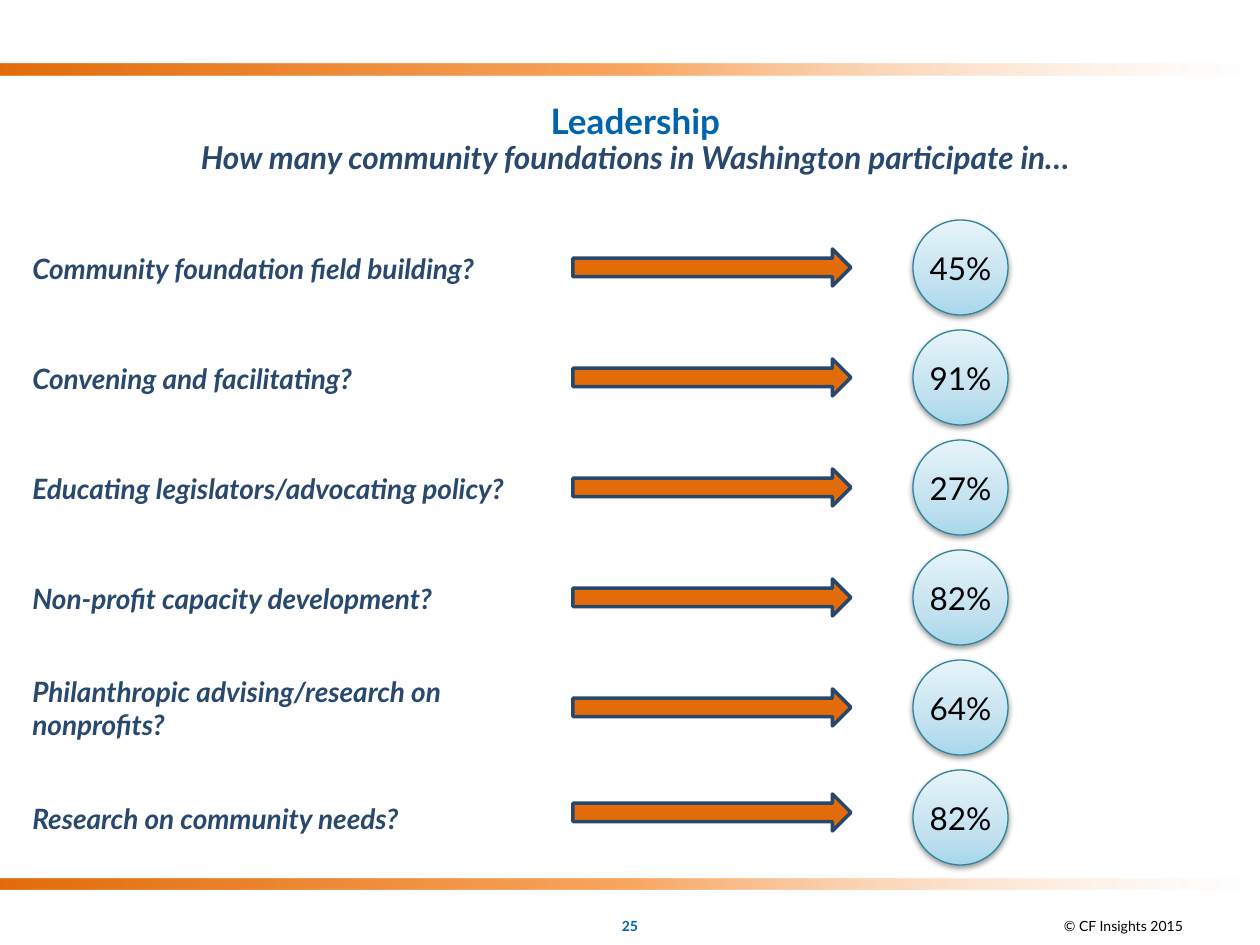
import pptx
import pptx.util
import pptx.dml.color
import pptx.enum.shapes
import pptx.enum.text
import pptx.oxml
import pptx.oxml.ns

HEX = {
    "blue": "0064AD", "navy": "28486E", "edge": "28476C", "black": "000000",
    "orange": "E36C09", "amber": "F9A661", "peach": "FDE1CA",
    "sky": "A8D7EB", "mist": "C3E2F0", "ice": "E7F4FA", "teal": "2D849A",
}
BAR = [(0, "orange", 100), (50, "amber", 100), (100, "peach", 0)]
DISC = [(0, "sky", 100), (35, "mist", 100), (100, "ice", 100)]
BARS = [879, 64]
HEADS = [
    ("Leadership", (82, 93, 1107, 55), 20, "blue", True, False),
    ("How many community foundations in Washington participate in…",
     (82, 132, 1107, 50), 18, "navy", True, True),
]
FEET = [
    ("25", (483, 907, 294, 38), 8, "blue", True, False),
    ("© CF Insights 2015", (987, 907, 273, 38), 8, "black", False, False),
]
ROWS = [
    ("Community foundation field building?", 1, "45%", 0),
    ("Convening and facilitating?", 1, "91%", 0),
    ("Educating legislators/advocating policy?", 1, "27%", 0),
    ("Non-profit capacity development?", 1, "82%", 0),
    ("Philanthropic advising/research on nonprofits?", 2, "64%", 0),
    ("Research on community needs?", 1, "82%", -5),
]
TOP, STEP = 268, 110
KIND = pptx.enum.shapes.MSO_SHAPE
ALIGN = pptx.enum.text.PP_ALIGN
ANCHOR = pptx.enum.text.MSO_ANCHOR
NS = pptx.oxml.ns.nsdecls("a")


def px(num):
    return pptx.util.Inches(num / 126)


def rgb(name):
    return pptx.dml.color.RGBColor.from_string(HEX[name])


def shape(kind, box):
    item = slide.shapes.add_shape(kind, *map(px, box))
    item.shadow.inherit = False
    return item


def edge(item, name, width):
    item.line.color.rgb = rgb(name)
    item.line.width = pptx.util.Pt(width)


def blend(item, stops, angle):
    item.fill.background()
    old = item.fill._xPr.find(pptx.oxml.ns.qn("a:noFill"))
    marks = "".join(
        f'<a:gs pos="{pos * 1000}"><a:srgbClr val="{HEX[name]}">'
        f'<a:alpha val="{alpha * 1000}"/></a:srgbClr></a:gs>'
        for pos, name, alpha in stops)
    old.getparent().replace(old, pptx.oxml.parse_xml(
        f'<a:gradFill {NS} rotWithShape="1"><a:gsLst>{marks}</a:gsLst>'
        f'<a:lin ang="{angle * 60000}" scaled="0"/></a:gradFill>'))


def shade(item):
    item._element.spPr.find(pptx.oxml.ns.qn("a:effectLst")).append(
        pptx.oxml.parse_xml(
            f'<a:outerShdw {NS} blurRad="40000" dist="20000" dir="5400000" '
            f'rotWithShape="0"><a:srgbClr val="{HEX["black"]}">'
            '<a:alpha val="38000"/></a:srgbClr></a:outerShdw>'))


def write(text, box, size, color, bold, slant,
          align=ALIGN.CENTER, anchor=ANCHOR.TOP, inset=True):
    frame = slide.shapes.add_textbox(*map(px, box)).text_frame
    frame.word_wrap = True
    frame.vertical_anchor = anchor
    if not inset:
        frame.margin_left = frame.margin_right = 0
        frame.margin_top = frame.margin_bottom = 0
    para = frame.paragraphs[0]
    para.alignment = align
    run = para.add_run()
    run.text = text
    font = run.font
    font.name, font.size = "Lato", pptx.util.Pt(size)
    font.bold, font.italic = bold, slant
    font.color.rgb = rgb(color)


deck = pptx.Presentation()
deck.slide_width, deck.slide_height = px(1260), px(945)
slide = deck.slides.add_slide(deck.slide_layouts[6])

for top in BARS:
    bar = shape(KIND.RECTANGLE, (0, top, 1260, 11))
    bar.line.fill.background()
    blend(bar, BAR, 0)

for head in HEADS:
    write(*head)

for i, (label, lines, value, shift) in enumerate(ROWS):
    mid = TOP + STEP * i
    high = 13 + 34 * lines
    write(label, (20, mid - high // 2, 553, high), 16, "navy", True, True,
          ALIGN.LEFT)
    arrow = shape(KIND.RIGHT_ARROW, (573, mid - 19 + shift, 278, 37))
    arrow.fill.solid()
    arrow.fill.fore_color.rgb = rgb("orange")
    edge(arrow, "edge", 2)
    disc = shape(KIND.OVAL, (913, mid - 48, 95, 95))
    blend(disc, DISC, 270)
    edge(disc, "teal", 0.75)
    shade(disc)
    write(value, (924, mid - 19, 73, 38), 18, "black", False, False,
          anchor=ANCHOR.MIDDLE, inset=False)

for foot in FEET:
    write(*foot, anchor=ANCHOR.MIDDLE)

deck.save("out.pptx")
